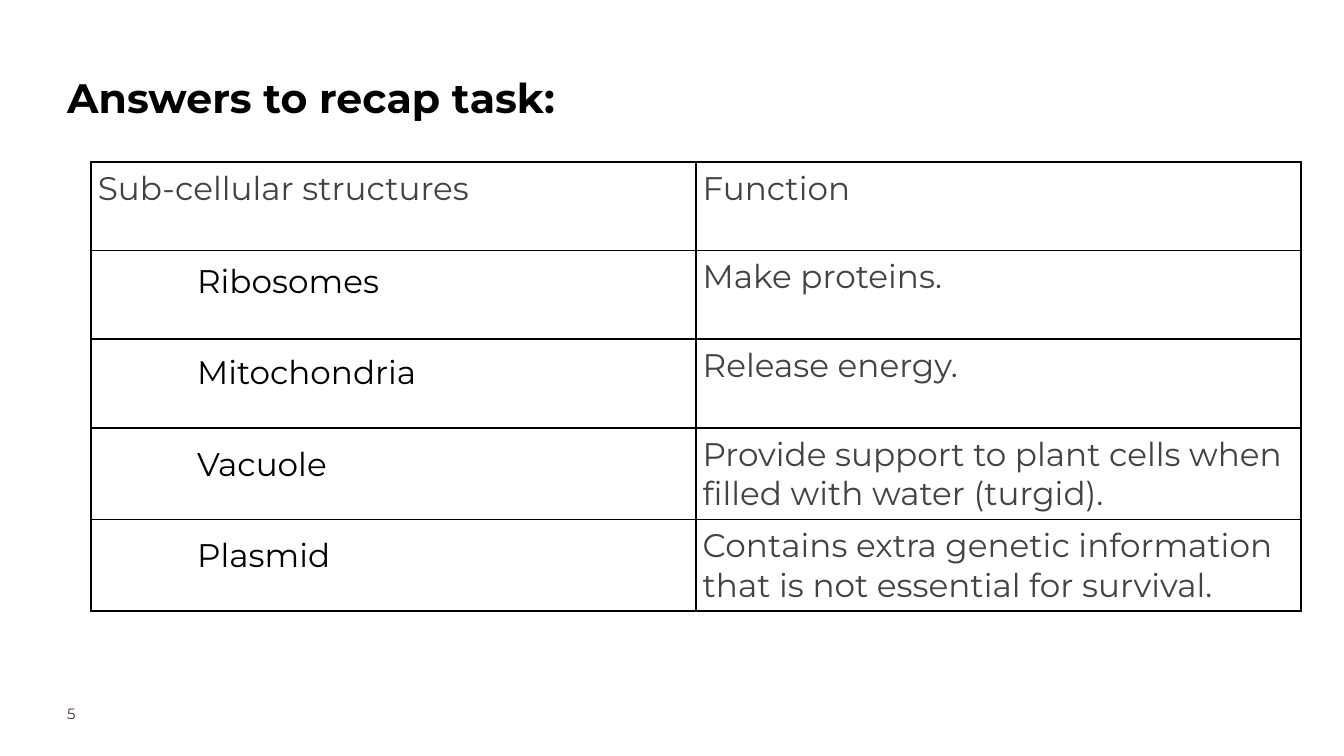
from lxml.etree import SubElement
from pptx import Presentation
from pptx.dml.color import RGBColor
from pptx.enum.text import MSO_ANCHOR, PP_ALIGN
from pptx.oxml.ns import qn
from pptx.util import Cm, Pt

# Content
TITLE = "Answers to recap task:"
PAGE_NUMBER = "5"
HEADINGS = ("Sub-cellular structures", "Function")
ANSWERS = [
    ("Ribosomes", "Make proteins."),
    ("Mitochondria", "Release energy."),
    ("Vacuole", "Provide support to plant cells when filled with water (turgid)."),
    ("Plasmid", "Contains extra genetic information that is not essential for survival."),
]

# Style and layout, in cm
FONT = "Montserrat"
BLACK, GREY, PLUM = "000000", "434343", "4B3241"
BODY_SIZE = 35
PADDING = 0.25
BORDER_WIDTH = 2.25
TABLE_LEFT, TABLE_TOP = 3.45, 6.12
COLUMN_WIDTH = 22.86
ROW_HEIGHTS = (3.35, 3.35, 3.35, 3.23, 3.23)
STRUCTURE_LEFT, STRUCTURE_TOP, STRUCTURE_STEP = 7.2, 9.6, 3.46


def style(paragraph, size, color, bold=False):
    font = paragraph.font
    font.name, font.size, font.bold = FONT, Pt(size), bold
    font.color.rgb = RGBColor.from_string(color)


def set_margins(target, margin):
    target.margin_left = target.margin_right = Cm(margin)
    target.margin_top = target.margin_bottom = Cm(margin)


def add_text(slide, text, box, size, color, margin):
    frame = slide.shapes.add_textbox(*map(Cm, box)).text_frame
    frame.word_wrap = True
    set_margins(frame, margin)
    frame.text = text
    style(frame.paragraphs[0], size, color)


def add_borders(cell):
    properties = cell._tc.get_or_add_tcPr()
    for position, side in enumerate(("a:lnL", "a:lnR", "a:lnT", "a:lnB")):
        line = properties.makeelement(qn(side), {"w": str(Pt(BORDER_WIDTH))})
        fill = SubElement(line, qn("a:solidFill"))
        SubElement(fill, qn("a:srgbClr"), val=BLACK)
        properties.insert(position, line)


prs = Presentation()
prs.slide_width, prs.slide_height = Cm(50.8), Cm(28.575)
slide = prs.slides.add_slide(prs.slide_layouts[5])

# Title
title = slide.shapes.title
title.left, title.top, title.width, title.height = map(Cm, (2.54, 2.46, 36.68, 4.52))
title_frame = title.text_frame
title_frame.text = TITLE
title_frame.word_wrap = True
title_frame.vertical_anchor = MSO_ANCHOR.TOP
set_margins(title_frame, 0)
heading = title_frame.paragraphs[0]
heading.alignment = PP_ALIGN.LEFT
heading.line_spacing = 1.15
style(heading, 44, BLACK, bold=True)

# Page number
add_text(slide, PAGE_NUMBER, (2.54, 26.62, 4, 1), 16, PLUM, 0)

# Table: the structure names lie over its empty first column
rows = [HEADINGS] + [("", function) for _, function in ANSWERS]
table = slide.shapes.add_table(
    len(rows), len(HEADINGS), Cm(TABLE_LEFT), Cm(TABLE_TOP),
    Cm(COLUMN_WIDTH * len(HEADINGS)), Cm(sum(ROW_HEIGHTS)),
).table
table.first_row = table.horz_banding = False
for column in table.columns:
    column.width = Cm(COLUMN_WIDTH)
for r, (texts, height) in enumerate(zip(rows, ROW_HEIGHTS)):
    table.rows[r].height = Cm(height)
    for c, text in enumerate(texts):
        cell = table.cell(r, c)
        cell.text = text
        cell.fill.background()
        set_margins(cell, PADDING)
        style(cell.text_frame.paragraphs[0], BODY_SIZE, GREY)
        add_borders(cell)

# Structure names
for i, (structure, _) in enumerate(ANSWERS):
    top = STRUCTURE_TOP + i * STRUCTURE_STEP
    add_text(slide, structure, (STRUCTURE_LEFT, top, 12.98, 2.44), BODY_SIZE, BLACK, PADDING)

prs.save("out.pptx")
